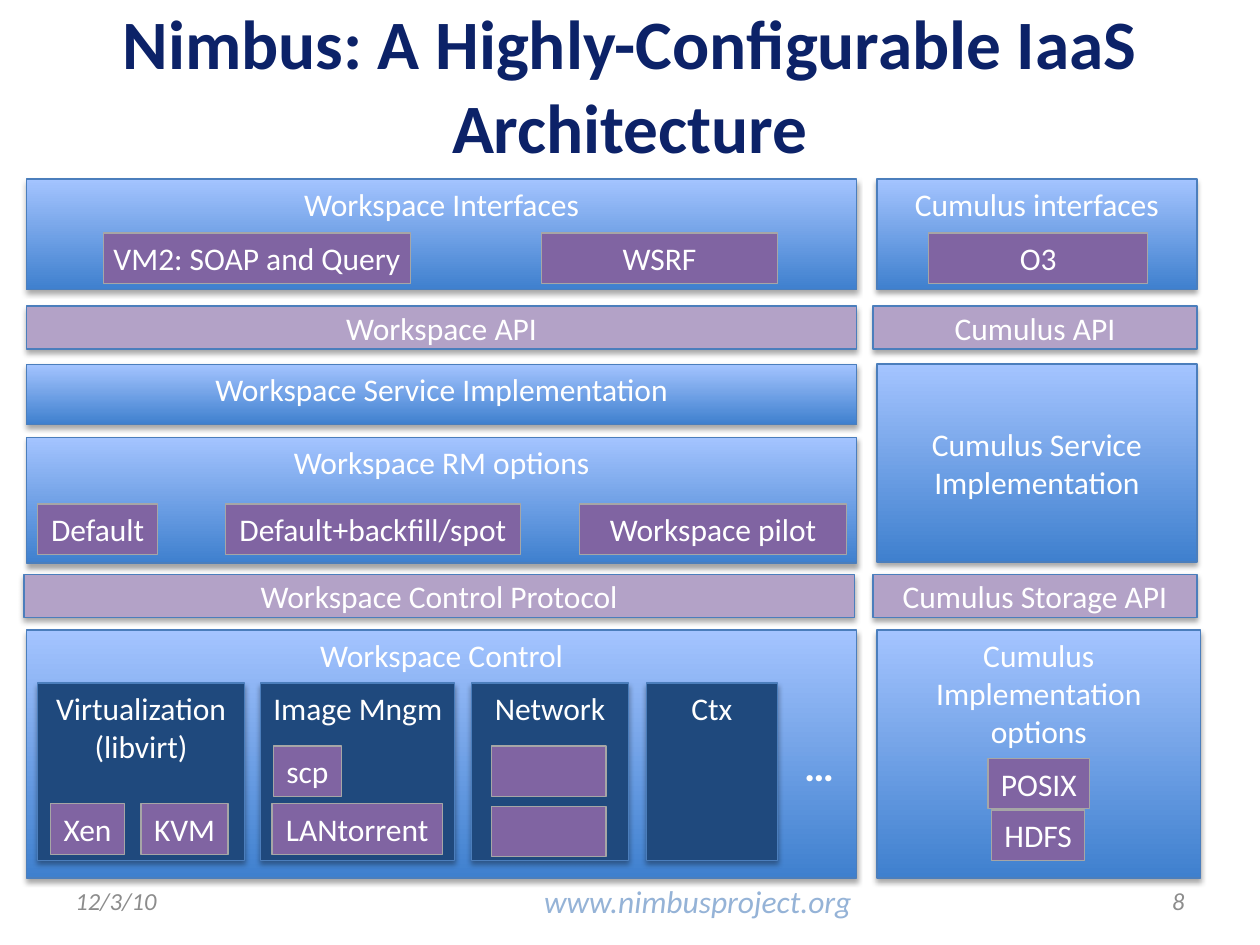
from dataclasses import dataclass

from lxml import etree
from pptx import Presentation
from pptx import util as u
from pptx.dml.color import RGBColor
from pptx.enum import shapes, text
from pptx.oxml import ns

PX = 9144  # EMU per px, 100 px to the inch


@dataclass(frozen=True)
class Theme:
    font: str = "Calibri"
    white: str = "FFFFFF"
    navy: str = "0C2268"
    grey: str = "8C8C8C"
    link: str = "95B3D7"
    low: str = "3F80CE"
    high: str = "A4C4FF"
    dark: str = "1F497D"
    lilac: str = "B3A2C7"
    purple: str = "8064A2"
    edge: str = "4B7EBC"
    rim: str = "A6A6A6"
    title: float = 39.6
    dots: int = 24
    body: int = 18
    small: int = 14


LEFT, MID, RIGHT = text.PP_ALIGN.LEFT, text.PP_ALIGN.CENTER, text.PP_ALIGN.RIGHT
TOP, CORE = text.MSO_ANCHOR.TOP, text.MSO_ANCHOR.MIDDLE


class Deck:
    def __init__(self, theme):
        self.theme = theme
        self.prs = Presentation()
        self.prs.slide_width, self.prs.slide_height = u.Inches(10), u.Inches(7.5)
        self.slide = self.prs.slides.add_slide(self.prs.slide_layouts[5])

    def letter(self, shape, words, size, color, align=MID, anchor=TOP,
               wrap=True, bold=False, italic=False):
        frame = shape.text_frame
        frame.text = words
        frame.word_wrap = wrap
        frame.auto_size = text.MSO_AUTO_SIZE.NONE
        frame.vertical_anchor = anchor
        for para in frame.paragraphs:
            para.alignment = align
            for run in para.runs:
                font = run.font
                font.name, font.size = self.theme.font, u.Pt(size)
                font.bold, font.italic = bold, italic
                font.color.rgb = RGBColor.from_string(color)

    def title(self, words, x, y, w, h):
        shape = self.slide.shapes.title
        shape.left, shape.top, shape.width, shape.height = (v * PX for v in (x, y, w, h))
        self.letter(shape, words, self.theme.title, self.theme.navy, anchor=CORE, bold=True)

    def label(self, words, x, y, w, h, size, color, **look):
        shape = self.slide.shapes.add_textbox(x * PX, y * PX, w * PX, h * PX)
        self.letter(shape, words, size, color, **look)

    def rect(self, words, x, y, w, h, fill, edge, **look):
        shape = self.slide.shapes.add_shape(
            shapes.MSO_SHAPE.RECTANGLE, x * PX, y * PX, w * PX, h * PX)
        shape.shadow.inherit = False
        shape.line.color.rgb = RGBColor.from_string(edge)
        shape.line.width = u.Pt(0.75)
        if fill:
            shape.fill.solid()
            shape.fill.fore_color.rgb = RGBColor.from_string(fill)
        else:
            shape.fill.gradient()
            shape.fill.gradient_angle = 90
            for stop, tone in zip(shape.fill.gradient_stops, (self.theme.low, self.theme.high)):
                stop.color.rgb = RGBColor.from_string(tone)
        if words:
            self.letter(shape, words, self.theme.body, self.theme.white, **look)
        return shape

    def shade(self, shape):
        """Soft shadow straight below the shape."""
        effects = shape.element.spPr.find(ns.qn("a:effectLst"))
        outer = etree.SubElement(effects, ns.qn("a:outerShdw"), blurRad=str(u.Pt(3.1)),
                                 dist=str(u.Pt(1.8)), dir="5400000", rotWithShape="0")
        tone = etree.SubElement(outer, ns.qn("a:srgbClr"), val="000000")
        etree.SubElement(tone, ns.qn("a:alpha"), val="35000")

    def panel(self, words, x, y, w, h, anchor=TOP):
        self.shade(self.rect(words, x, y, w, h, None, self.theme.edge, anchor=anchor))

    def block(self, words, x, y, w, h):
        self.shade(self.rect(words, x, y, w, h, self.theme.dark, self.theme.edge))

    def bar(self, words, x, y, w, h=34):
        self.shade(self.rect(words, x, y, w, h, self.theme.lilac, self.theme.edge, anchor=CORE))

    def tag(self, words, x, y, w, h=40):
        self.rect(words, x, y, w, h, self.theme.purple, self.theme.rim, wrap=False)


def main():
    theme = Theme()
    deck = Deck(theme)
    deck.title("Nimbus: A Highly-Configurable IaaS Architecture", 50, 4, 900, 125)

    # Workspace column
    for words, y, h in (("Workspace Interfaces", 142, 88),
                        ("Workspace Service Implementation", 289, 48),
                        ("Workspace RM options", 347, 100),
                        ("Workspace Control", 500, 197)):
        deck.panel(words, 21, y, 659, h)
    deck.bar("Workspace API", 21, 243, 659)
    deck.bar("Workspace Control Protocol", 19, 456, 659)

    # Cumulus column
    deck.panel("Cumulus interfaces", 696, 142, 254, 88)
    deck.panel("Cumulus Service Implementation", 696, 289, 254, 157, CORE)
    deck.panel("Cumulus Implementation options", 696, 500, 257, 197)
    deck.bar("Cumulus API", 693, 243, 257)
    deck.bar("Cumulus Storage API", 693, 456, 257)

    # Workspace control modules
    for words, x, w in (("Virtualization\n(libvirt)", 30, 164), ("Image Mngm", 207, 154),
                        ("Network", 374, 125), ("Ctx", 513, 104)):
        deck.block(words, x, 542, w, 141)
    deck.label("…", 628, 582, 44, 50, theme.dots, theme.white, wrap=False, bold=True)

    # Options inside the panels and modules
    for words, x, y, w in (
            ("VM2: SOAP and Query", 82, 185, 244), ("WSRF", 430, 185, 187), ("O3", 737, 185, 174),
            ("Default", 30, 400, 95), ("Default+backfill/spot", 179, 400, 234),
            ("Workspace pilot", 460, 400, 212),
            ("Xen", 40, 638, 59), ("KVM", 112, 638, 69),
            ("scp", 217, 592, 54), ("LANtorrent", 216, 638, 135),
            ("", 390, 592, 91), ("", 390, 640, 91),
            ("POSIX", 784, 602, 81), ("HDFS", 787, 643, 74)):
        deck.tag(words, x, y, w)

    # Footer
    deck.label("12/3/10", 50, 695, 233, 40, theme.small, theme.grey,
               align=LEFT, anchor=CORE, italic=True)
    deck.label("www.nimbusproject.org", 422, 695, 273, 40, theme.body, theme.link,
               align=LEFT, wrap=False, italic=True)
    deck.label("8", 717, 695, 233, 40, theme.small, theme.grey,
               align=RIGHT, anchor=CORE, italic=True)

    deck.prs.save("out.pptx")


if __name__ == "__main__":
    main()
